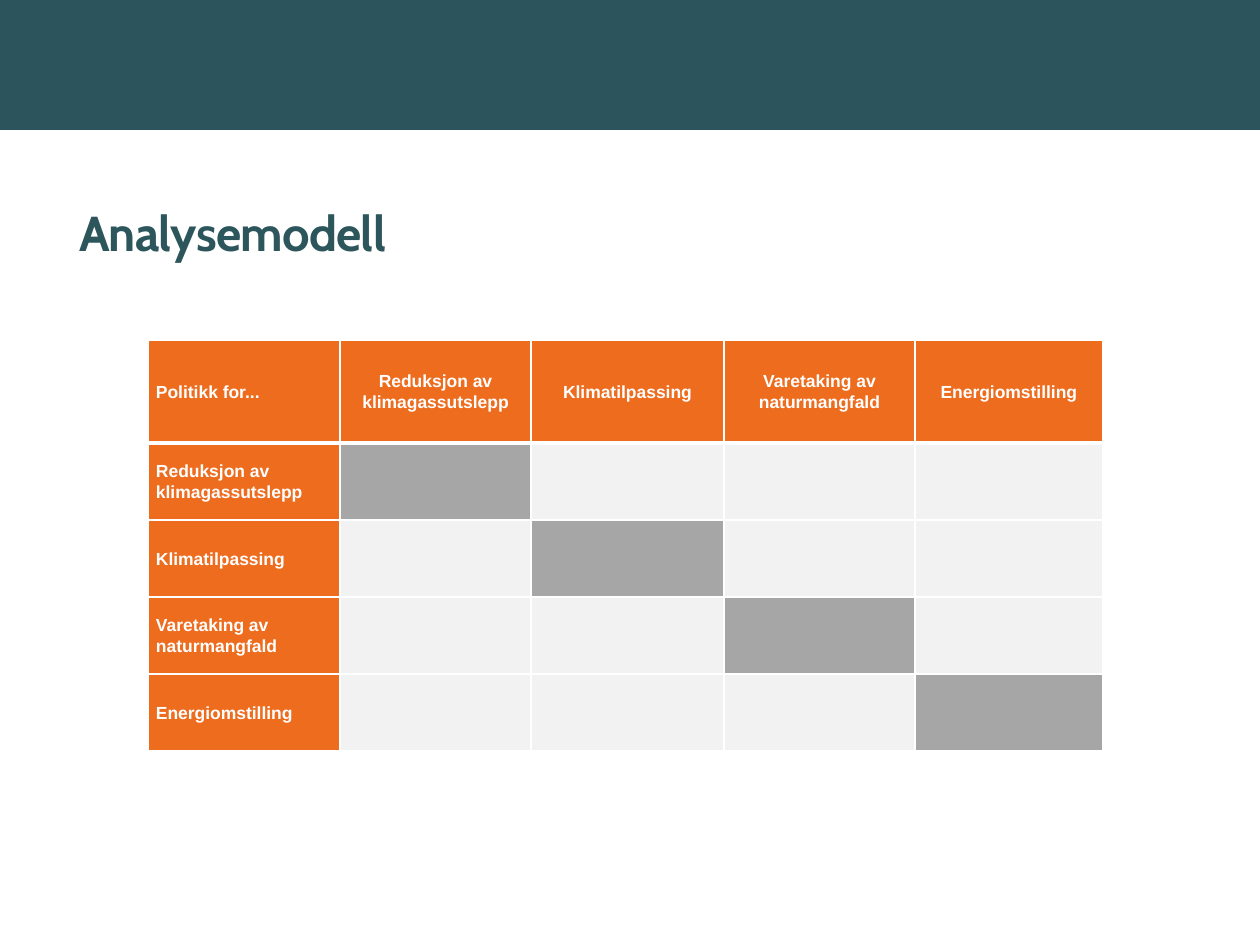
"""Build the Analysemodell slide with its policy cross table."""
from dataclasses import dataclass

from lxml.etree import SubElement
from pptx import Presentation
from pptx.dml.color import RGBColor
from pptx.enum.shapes import MSO_SHAPE
from pptx.enum.text import MSO_ANCHOR, PP_ALIGN
from pptx.oxml.ns import qn
from pptx.util import Emu, Pt

TITLE = "Analysemodell"
CORNER = "Politikk for..."
POLICIES = [
    "Reduksjon av klimagassutslepp",
    "Klimatilpassing",
    "Varetaking av naturmangfald",
    "Energiomstilling",
]

SLIDE_SIZE = (1260, 945)
BAND = (0, 0, 1260, 130)
TITLE_BOX = (79, 166, 1072, 132)
TABLE_LEFT, TABLE_TOP = 148, 340
COLUMN_WIDTHS = [192, 191, 193, 191, 188]
ROW_HEIGHTS = [103] + [77] * len(POLICIES)
CELL_INSET = 8


@dataclass(frozen=True)
class Theme:
    band: str = "2C545C"
    title: str = "2D555C"
    header: str = "ED6C1E"
    diagonal: str = "A6A6A6"
    plain: str = "F2F2F2"
    white: str = "FFFFFF"
    title_font: str = "Cabin"
    table_font: str = "Arial"
    title_size: int = 28
    table_size: int = 10
    thin: int = 1
    thick: int = 3


THEME = Theme()


def px(length):
    return Emu(round(length * 914400 / 126))


def paint(target, color):
    target.fill.solid()
    target.fill.fore_color.rgb = RGBColor.from_string(color)


def write(frame, text, *, font, size, color, align=PP_ALIGN.LEFT,
          line_spacing=None, space_after=None, tracking=None):
    para = frame.paragraphs[0]
    para.alignment = align
    para.line_spacing = line_spacing
    para.space_after = space_after
    span = para.add_run()
    span.text = text
    span.font.name = font
    span.font.size = Pt(size)
    span.font.bold = True
    span.font.color.rgb = RGBColor.from_string(color)
    if tracking is not None:
        span.font._element.set("spc", str(tracking))


def set_borders(cell, **widths):
    properties = cell._tc.get_or_add_tcPr()
    for position, side in enumerate("LRTB"):
        line = SubElement(properties, qn(f"a:ln{side}"), w=str(Pt(widths.get(side, THEME.thin))))
        fill = SubElement(line, qn("a:solidFill"))
        SubElement(fill, qn("a:srgbClr"), val=THEME.white)
        properties.insert(position, line)


def add_band(page):
    band = page.shapes.add_shape(MSO_SHAPE.RECTANGLE, *map(px, BAND))
    band.shadow.inherit = False
    band.line.fill.background()
    paint(band, THEME.band)


def add_title(page):
    box = page.shapes.title
    box.left, box.top, box.width, box.height = map(px, TITLE_BOX)
    frame = box.text_frame
    frame.margin_left = frame.margin_right = frame.margin_top = frame.margin_bottom = 0
    frame.vertical_anchor = MSO_ANCHOR.MIDDLE
    write(frame, TITLE, font=THEME.title_font, size=THEME.title_size,
          color=THEME.title, tracking=-40)


def add_policy_table(page):
    headings = [CORNER] + POLICIES
    count = len(headings)
    size = (sum(COLUMN_WIDTHS), sum(ROW_HEIGHTS))
    table = page.shapes.add_table(
        count, count, *map(px, (TABLE_LEFT, TABLE_TOP, *size))).table
    for column, width in zip(table.columns, COLUMN_WIDTHS):
        column.width = px(width)
    for row, height in zip(table.rows, ROW_HEIGHTS):
        row.height = px(height)

    for row in range(count):
        for column in range(count):
            cell = table.cell(row, column)
            cell.vertical_anchor = MSO_ANCHOR.MIDDLE
            cell.margin_left = cell.margin_right = px(CELL_INSET)
            cell.margin_top = cell.margin_bottom = 0
            is_heading = row == 0 or column == 0
            if is_heading:
                write(cell.text_frame, headings[max(row, column)],
                      font=THEME.table_font, size=THEME.table_size, color=THEME.white,
                      align=PP_ALIGN.CENTER if column else PP_ALIGN.LEFT,
                      line_spacing=1.07, space_after=Pt(8))
                paint(cell, THEME.header)
            else:
                paint(cell, THEME.diagonal if row == column else THEME.plain)
            set_borders(cell, T=THEME.thick if row == 1 else THEME.thin,
                        B=THEME.thick if row == 0 else THEME.thin)


def main():
    deck = Presentation()
    deck.slide_width, deck.slide_height = map(px, SLIDE_SIZE)
    page = deck.slides.add_slide(deck.slide_layouts[5])
    add_band(page)
    add_title(page)
    add_policy_table(page)
    deck.save("out.pptx")


if __name__ == "__main__":
    main()
